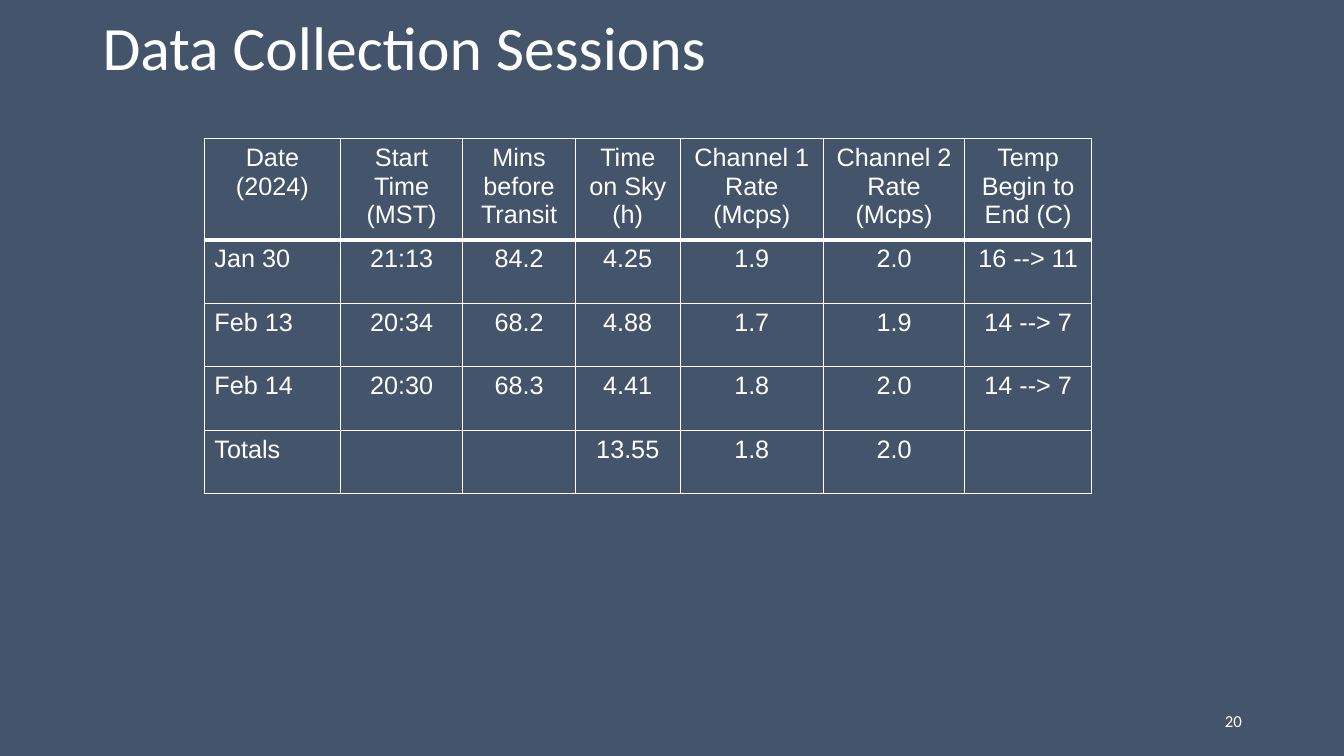
from lxml.etree import SubElement
from pptx import Presentation
from pptx.dml.color import RGBColor
from pptx.enum.text import MSO_ANCHOR, PP_ALIGN
from pptx.oxml.ns import qn
from pptx.util import Cm, Pt

TITLE = "Data Collection Sessions"
PAGE_NUMBER = "20"
SESSIONS = [
    ("Date (2024)", "Start Time (MST)", "Mins before Transit", "Time on Sky (h)",
     "Channel 1 Rate (Mcps)", "Channel 2 Rate (Mcps)", "Temp Begin to End (C)"),
    ("Jan 30", "21:13", "84.2", "4.25", "1.9", "2.0", "16 --> 11"),
    ("Feb 13", "20:34", "68.2", "4.88", "1.7", "1.9", "14 --> 7"),
    ("Feb 14", "20:30", "68.3", "4.41", "1.8", "2.0", "14 --> 7"),
    ("Totals", "", "", "13.55", "1.8", "2.0", ""),
]
COLUMN_WIDTHS = (3.43, 3.08, 2.84, 2.64, 3.61, 3.56, 3.2)
ROW_HEIGHT = 1.6
COLORS = {"background": "44546A", "text": "FFFFFF", "border": "FFFFFF"}


def write(frame, text, font_name, size, alignment):
    frame.text = text
    para = frame.paragraphs[0]
    para.alignment = alignment
    for span in para.runs:
        span.font.name = font_name
        span.font.size = Pt(size)
        span.font.color.rgb = RGBColor.from_string(COLORS["text"])
    return para


def add_border(cell, side, points):
    line = SubElement(cell._tc.get_or_add_tcPr(), qn(f"a:ln{side}"), w=str(Pt(points)))
    fill = SubElement(line, qn("a:solidFill"))
    SubElement(fill, qn("a:srgbClr"), val=COLORS["border"])


def add_title(page):
    title = page.shapes.title
    title.left, title.top, title.width, title.height = Cm(2.33), Cm(0), Cm(29.21), Cm(2.54)
    title.text_frame.vertical_anchor = MSO_ANCHOR.MIDDLE
    para = write(title.text_frame, TITLE, "Calibri", 44, PP_ALIGN.LEFT)
    para.line_spacing = 0.9


def add_sessions(page):
    table = page.shapes.add_table(
        len(SESSIONS), len(COLUMN_WIDTHS), Cm(5.15), Cm(3.5),
        Cm(sum(COLUMN_WIDTHS)), Cm(ROW_HEIGHT * len(SESSIONS))).table
    table.horz_banding = False
    for column, width in zip(table.columns, COLUMN_WIDTHS):
        column.width = Cm(width)
    for row_index, values in enumerate(SESSIONS):
        table.rows[row_index].height = Cm(ROW_HEIGHT)
        for column_index, value in enumerate(values):
            cell = table.cell(row_index, column_index)
            label = row_index > 0 and column_index == 0
            para = write(cell.text_frame, value, "Arial", 18,
                         PP_ALIGN.LEFT if label else PP_ALIGN.CENTER)
            for span in para.runs:
                span.font.bold = False
            for side in "LRTB":
                heavy = (row_index, side) in ((0, "B"), (1, "T"))
                add_border(cell, side, 3 if heavy else 1)
            cell.fill.background()


def add_page_number(page):
    box = page.shapes.add_textbox(Cm(23.93), Cm(17.65), Cm(7.62), Cm(1.01))
    box.text_frame.word_wrap = True
    box.text_frame.vertical_anchor = MSO_ANCHOR.MIDDLE
    write(box.text_frame, PAGE_NUMBER, "Calibri", 12, PP_ALIGN.RIGHT)


def main():
    deck = Presentation()
    deck.slide_width, deck.slide_height = Cm(33.87), Cm(19.05)
    page = deck.slides.add_slide(deck.slide_layouts[5])
    page.background.fill.solid()
    page.background.fill.fore_color.rgb = RGBColor.from_string(COLORS["background"])
    add_title(page)
    add_page_number(page)
    add_sessions(page)
    deck.save("out.pptx")


if __name__ == "__main__":
    main()
